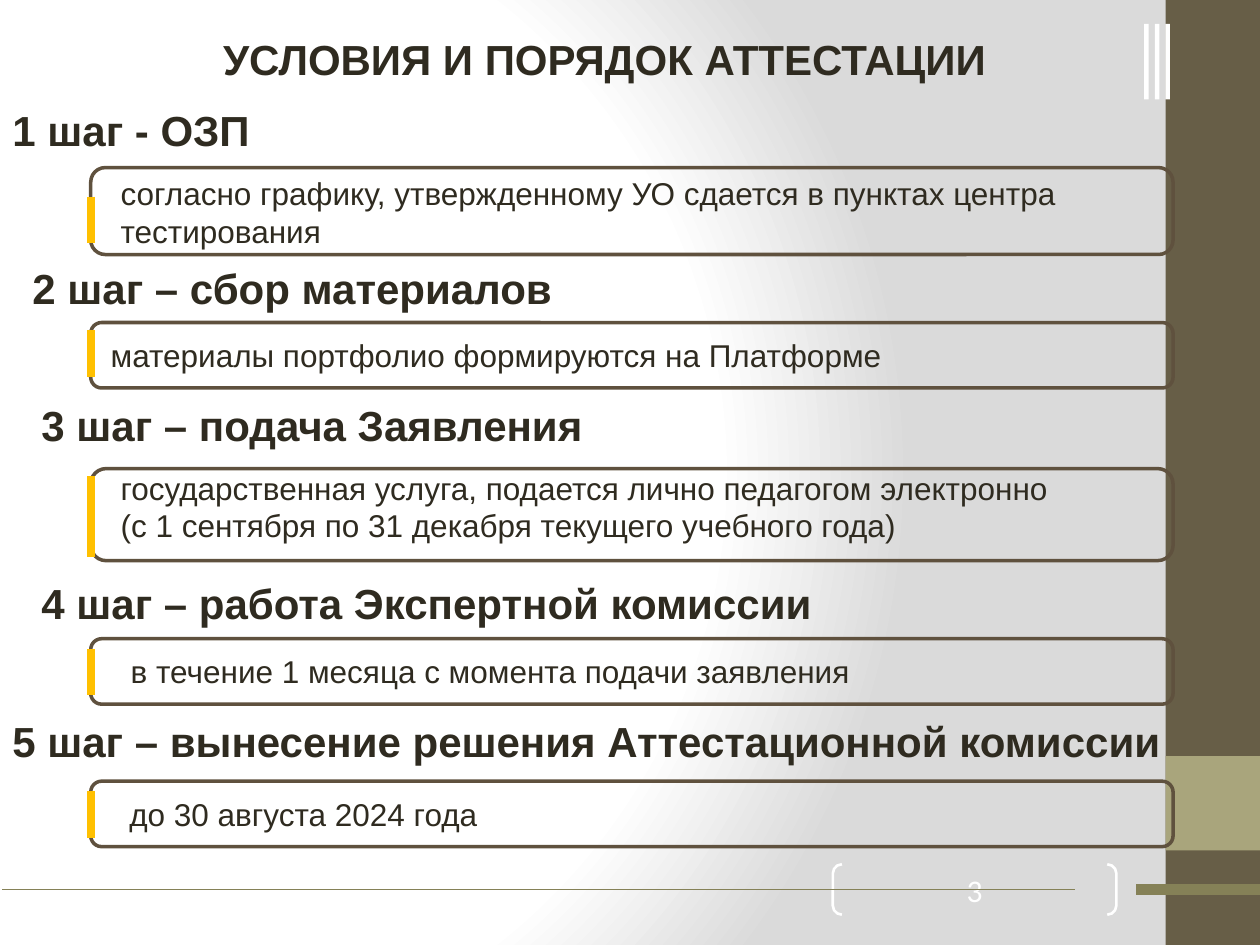
from lxml import etree
from pptx import Presentation
from pptx import oxml
from pptx import util as u
from pptx.dml import color
from pptx.enum import shapes, text
from pptx.oxml import ns

COLORS = {
    "ink": "2F2B20", "frame": "5F513E", "accent": "FFC000", "band": "675E47",
    "block": "A9A57C", "rule": "858157", "white": "FFFFFF", "shade": "DADADA",
}
HEADING = {"size": u.Pt(24), "name": "Arial", "bold": True}
DETAIL = {"size": u.Pt(18), "name": "Arial", "bold": False}
NUMBER = {"size": u.Pt(18), "name": "Calibri", "bold": False}
FRAME_LEFT, FRAME_WIDTH = 51.84, 618.5

STEPS = [
    {"heading": ("1 шаг - ОЗП", 0, 56.2, 151),
     "frame": (95.76, 49.7), "accent": (16.6, 26.6), "detail": (10, 0, 613.5, 51),
     "lines": ["согласно графику, утвержденному УО сдается в пунктах центра тестирования"]},
    {"heading": ("2 шаг – сбор материалов", 11.5, 146.2, 490),
     "frame": (184.3, 37.4), "accent": (4.3, 26.6), "detail": (4.3, 4.3, 603.4, 29),
     "lines": ["материалы портфолио формируются на Платформе"]},
    {"heading": ("3 шаг – подача Заявления", 16.6, 224.6, 490),
     "frame": (267.8, 52.6), "accent": (4.3, 46), "detail": (10, -3.6, 600.5, 51),
     "lines": ["государственная услуга, подается лично педагогом электронно",
               "(с 1 сентября по 31 декабря текущего учебного года)"]},
    {"heading": ("4 шаг – работа Экспертной комиссии", 16.6, 326.2, 664),
     "frame": (365, 37.4), "accent": (5.8, 26.6), "detail": (15.8, 4.3, 594.7, 29),
     "lines": ["в течение 1 месяца с момента подачи заявления"]},
    {"heading": ("5 шаг – вынесение решения Аттестационной комиссии", 0, 405.4, 692),
     "frame": (446.4, 37.4), "accent": (5.8, 26.6), "detail": (15, 4.3, 595.5, 29),
     "lines": ["до 30 августа 2024 года"]},
]


def points(*lengths):
    return [u.Pt(length) for length in lengths]


def rgb(name):
    return color.RGBColor.from_string(COLORS[name])


def write(frame, lines, style, ink="ink", align=text.PP_ALIGN.LEFT):
    for index, line in enumerate(lines):
        paragraph = frame.paragraphs[0] if index == 0 else frame.add_paragraph()
        paragraph.alignment = align
        run = paragraph.add_run()
        run.text = line
        for key, value in style.items():
            setattr(run.font, key, value)
        run.font.color.rgb = rgb(ink)


def add_label(slide, box, lines, style):
    label = slide.shapes.add_textbox(*points(*box)).text_frame
    label.word_wrap = True
    label.auto_size = text.MSO_AUTO_SIZE.SHAPE_TO_FIT_TEXT
    write(label, lines, style)


def add_block(slide, box, fill):
    block = slide.shapes.add_shape(shapes.MSO_SHAPE.RECTANGLE, *points(*box))
    block.shadow.inherit = False
    block.fill.solid()
    block.fill.fore_color.rgb = rgb(fill)
    block.line.fill.background()


def add_outline(slide, preset, box, ink, weight):
    outline = slide.shapes.add_shape(preset, *points(*box))
    outline.shadow.inherit = False
    outline.fill.background()
    outline.line.color.rgb = rgb(ink)
    outline.line.width = u.Pt(weight)
    return outline


def add_line(slide, ends, ink, weight):
    line = slide.shapes.add_connector(shapes.MSO_CONNECTOR.STRAIGHT, *points(*ends))
    line.line.color.rgb = rgb(ink)
    line.line.width = u.Pt(weight)
    etree.SubElement(line.element.spPr, ns.qn("a:effectLst"))


def set_background(slide):
    stops = "".join(
        f'<a:gs pos="{position}"><a:srgbClr val="{COLORS[name]}"/></a:gs>'
        for position, name in ((0, "white"), (75000, "white"), (100000, "shade")))
    slide.element.cSld.insert(0, oxml.parse_xml(
        f'<p:bg {ns.nsdecls("p", "a")}><p:bgPr><a:gradFill rotWithShape="1">'
        f'<a:gsLst>{stops}</a:gsLst><a:path path="circle">'
        '<a:fillToRect l="20000" t="50000" r="100000" b="50000"/></a:path>'
        '</a:gradFill><a:effectLst/></p:bgPr></p:bg>'))


def add_side_band(slide, left, top, width, height):
    add_block(slide, (left, top, width, height), "band")
    add_block(slide, (left, top + 0.8 * height, width, width), "block")


def add_page_number(slide, left, top, width, height):
    brackets = add_outline(slide, shapes.MSO_SHAPE.DOUBLE_BRACKET,
                           (left, top, width, height), "white", 1.5)
    brackets.adjustments[0] = 0.18
    frame = brackets.text_frame
    for side in ("left", "top", "right", "bottom"):
        setattr(frame, f"margin_{side}", 0)
    frame.vertical_anchor = text.MSO_ANCHOR.MIDDLE
    write(frame, ["3"], NUMBER, "white", text.PP_ALIGN.CENTER)


def add_title(slide, left, top, width, height):
    title = slide.shapes.title
    box = dict(zip(("left", "top", "width", "height"), points(left, top, width, height)))
    for key, value in box.items():
        setattr(title, key, value)
    layout = {"word_wrap": True, "auto_size": text.MSO_AUTO_SIZE.NONE,
              "vertical_anchor": text.MSO_ANCHOR.MIDDLE}
    for key, value in layout.items():
        setattr(title.text_frame, key, value)
    write(title.text_frame, ["УСЛОВИЯ И ПОРЯДОК АТТЕСТАЦИИ"], HEADING,
          align=text.PP_ALIGN.CENTER)


def add_corner_marks(slide, left, top, width, height):
    for index in range(3):
        add_block(slide, (left + index * 6.1, top, width, height), "white")


def add_footer_rules(slide, left, middle):
    add_line(slide, (left, middle, left + 612.8, middle), "rule", 1)
    add_line(slide, (left + 648, middle, left + 720, middle), "rule", 6)


def add_step(slide, left, width, step):
    top, height = step["frame"]
    add_outline(slide, shapes.MSO_SHAPE.ROUNDED_RECTANGLE,
                (left, top, width, height), "frame", 2)
    dx, dy, detail_width, detail_height = step["detail"]
    add_label(slide, (left + dx, top + dy, detail_width, detail_height),
              step["lines"], DETAIL)
    offset, length = step["accent"]
    add_line(slide, (left, top + offset, left, top + offset + length), "accent", 4.5)
    heading, heading_left, heading_top, heading_width = step["heading"]
    add_label(slide, (heading_left, heading_top, heading_width, 36), [heading], HEADING)


def main():
    deck = Presentation()
    deck.slide_width, deck.slide_height = points(720, 540)
    slide = deck.slides.add_slide(deck.slide_layouts[5])
    set_background(slide)
    add_side_band(slide, 666, 0, 54, 540)
    add_page_number(slide, 475.9, 493.9, 162, 28.8)
    add_title(slide, 109, 16.6, 473, 33.8)
    add_corner_marks(slide, 653.8, 13.7, 2.6, 43.2)
    add_footer_rules(slide, 1.4, 508.3)
    for step in STEPS:
        add_step(slide, FRAME_LEFT, FRAME_WIDTH, step)
    deck.save("out.pptx")


if __name__ == "__main__":
    main()
